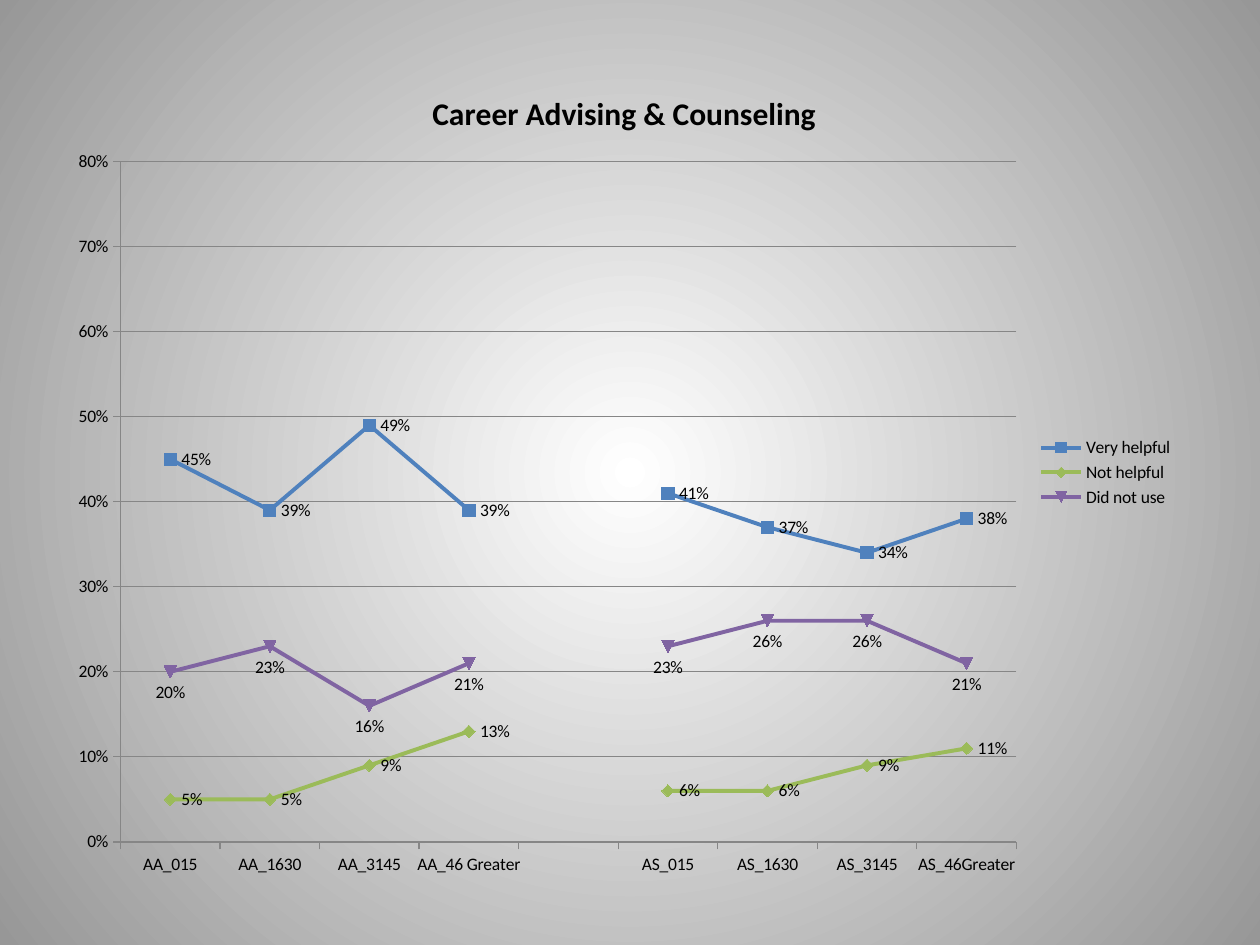
"""Builds a slide with a line chart of career advising and counseling ratings."""
from pptx import Presentation
from pptx.chart.data import CategoryChartData
from pptx.dml.color import RGBColor
from pptx.enum.chart import XL_CHART_TYPE as CT, XL_LABEL_POSITION as LP
from pptx.enum.chart import XL_LEGEND_POSITION, XL_TICK_MARK
from pptx.oxml import parse_xml
from pptx.oxml.ns import nsdecls, qn
from pptx.util import Pt


def rgb(value):
    return RGBColor.from_string(value)


def layout(target="", **places):
    inner = f'<c:layoutTarget val="{target}"/>' if target else ""
    inner += "".join(f'<c:{k}Mode val="edge"/>' for k in "xy")
    inner += "".join(f'<c:{k} val="{v}"/>' for k, v in places.items())
    return parse_xml(f'<c:layout {nsdecls("c")}><c:manualLayout>{inner}</c:manualLayout></c:layout>')


CATEGORIES = ["AA_015", "AA_1630", "AA_3145", "AA_46 Greater", "",
              "AS_015", "AS_1630", "AS_3145", "AS_46Greater"]
SERIES = [
    ("Very helpful", "4F81BD", LP.RIGHT, [0.45, 0.39, 0.49, 0.39, None, 0.41, 0.37, 0.34, 0.38]),
    ("Not helpful", "9BBB59", LP.RIGHT, [0.05, 0.05, 0.09, 0.13, None, 0.06, 0.06, 0.09, 0.11]),
    ("Did not use", "8064A2", LP.BELOW, [0.2, 0.23, 0.16, 0.21, None, 0.23, 0.26, 0.26, 0.21]),
]

prs = Presentation()
prs.slide_width, prs.slide_height = Pt(720), Pt(540)
s = prs.slides.add_slide(prs.slide_layouts[6])

fill = s.background.fill
fill.gradient()
for stop, position, color in zip(fill.gradient_stops, (0, 1), ("FFFFFF", "979797")):
    stop.position = position
    stop.color.rgb = rgb(color)
lin = s.element.find(".//" + qn("a:lin"))
lin.getparent().replace(lin, parse_xml(
    f'<a:path {nsdecls("a")} path="circle">'
    '<a:fillToRect l="50000" t="50000" r="50000" b="50000"/></a:path>'))

data = CategoryChartData(number_format="0%")
data.categories = CATEGORIES
for name, color, position, values in SERIES:
    data.add_series(name, values)
chart = s.shapes.add_chart(CT.LINE_MARKERS, Pt(30), Pt(30), Pt(648), Pt(480), data).chart
chart.font.name = "Calibri"
chart.font.size = Pt(10)
chart.font.color.rgb = rgb("000000")

tf = chart.chart_title.text_frame
tf.text = "Career Advising & Counseling"
font = tf.paragraphs[0].runs[0].font
font.name, font.size, font.bold = "Calibri", Pt(18), True
font.color.rgb = rgb("000000")
chart.chart_title.include_in_layout = True
title = chart.chart_title.element
for old in title.findall(qn("c:layout")):
    title.remove(old)
title.find(qn("c:tx")).addnext(layout(x=0.33, y=0.04))
title.find(qn("c:overlay")).set("val", "1")

chart.has_legend = True
chart.legend.position = XL_LEGEND_POSITION.RIGHT
chart.legend.include_in_layout = False

plot_area = chart.element.find(".//" + qn("c:plotArea"))
for old in plot_area.findall(qn("c:layout")):
    plot_area.remove(old)
plot_area.insert(0, layout("inner", x=0.06, y=0.13, w=0.79, h=0.81))

value_axis = chart.value_axis
value_axis.minimum_scale, value_axis.maximum_scale, value_axis.major_unit = 0, 0.8, 0.1
value_axis.has_major_gridlines = True
value_axis.tick_labels.number_format = "0%"
value_axis.tick_labels.number_format_is_linked = False
for axis in (chart.category_axis, value_axis):
    axis.major_tick_mark = XL_TICK_MARK.OUTSIDE
for part in (chart.category_axis, value_axis, value_axis.major_gridlines):
    part.format.line.color.rgb = rgb("868686")
    part.format.line.width = Pt(0.75)

chart.plots[0].vary_by_categories = False
for series, (name, color, position, values) in zip(chart.plots[0].series, SERIES):
    series.smooth = False
    series.format.line.color.rgb = rgb(color)
    series.format.line.width = Pt(2.25)
    series.marker.size = 7
    series.marker.format.fill.solid()
    series.marker.format.fill.fore_color.rgb = rgb(color)
    series.marker.format.line.color.rgb = rgb(color)
    labels = series.data_labels
    labels.show_value = True
    labels.number_format = "0%"
    labels.number_format_is_linked = False
    labels.position = position

prs.save("out.pptx")
